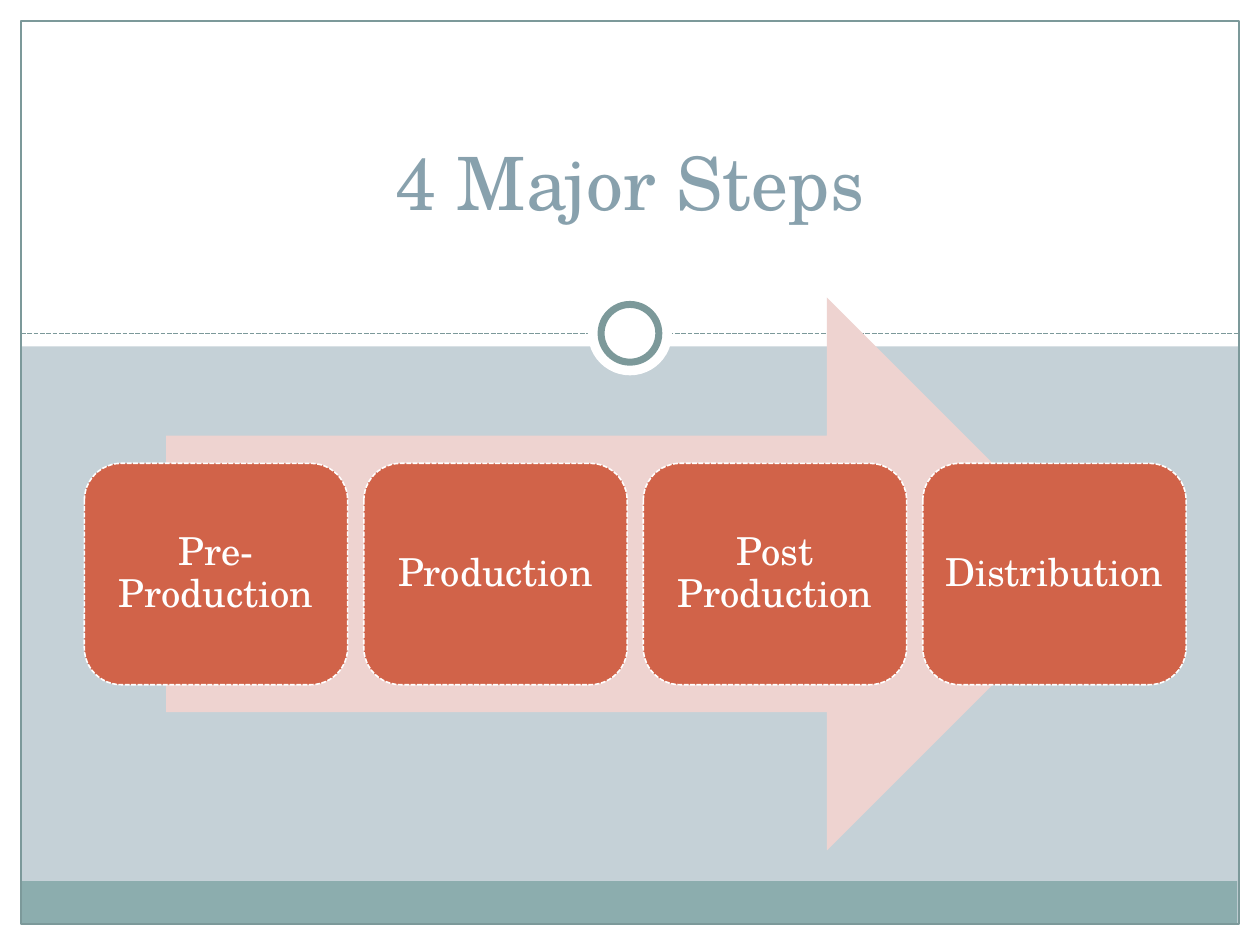
from dataclasses import dataclass
from typing import Optional

from pptx import Presentation
from pptx.dml.color import RGBColor
from pptx.enum.dml import MSO_LINE
from pptx.enum.shapes import MSO_CONNECTOR, MSO_SHAPE
from pptx.enum.text import MSO_ANCHOR, PP_ALIGN
from pptx.oxml.ns import qn
from pptx.util import Pt
from lxml.etree import SubElement


@dataclass(frozen=True)
class Theme:
    font: str = "TeX Gyre Schola"
    title_size: float = 42
    step_size: float = 22
    title: str = "88A1AD"
    backdrop: str = "C5D1D7"
    white: str = "FFFFFF"
    footer: str = "8CADAE"
    rule: str = "7C999A"
    arrow: str = "EED3D0"
    step: str = "D16349"


@dataclass(frozen=True)
class Stroke:
    color: str
    width: float
    dash: Optional[MSO_LINE] = None


@dataclass(frozen=True)
class Box:
    left: float
    top: float
    width: float
    height: float

    def points(self) -> tuple:
        return Pt(self.left), Pt(self.top), Pt(self.width), Pt(self.height)


@dataclass(frozen=True)
class Shape:
    kind: MSO_SHAPE
    box: Box
    fill: Optional[str] = None
    stroke: Optional[Stroke] = None


T = Theme()
W, H, MARGIN = 720, 540, 12
CENTER_X, RULE_Y = W / 2, 190.5
STEPS = ["Pre-Production", "Production", "Post Production", "Distribution"]
STEP_BOX, STEP_PITCH = Box(48.2, 264.75, 150.5, 126.5), 159.7
STEP_STROKE = Stroke(T.white, 0.9, MSO_LINE.SQUARE_DOT)


def centered(diameter: float) -> Box:
    """Box of a circle around the middle of the divider."""
    return Box(CENTER_X - diameter / 2, RULE_Y - diameter / 2, diameter, diameter)


MARGINS = [
    Box(0, H - MARGIN, W, MARGIN),
    Box(W - MARGIN, 0, MARGIN, H),
    Box(0, 0, MARGIN, H),
    Box(0, 0, W, 198),
]
BANDS = [Shape(MSO_SHAPE.RECTANGLE, box, T.white) for box in MARGINS] + [
    Shape(MSO_SHAPE.RECTANGLE, Box(11.5, 503.5, 695.5, 24.5), T.footer),
]
FRAME_AND_RING = [
    Shape(MSO_SHAPE.RECTANGLE, Box(MARGIN, MARGIN, W - 2 * MARGIN, H - 2 * MARGIN),
          stroke=Stroke(T.rule, 0.75)),
    Shape(MSO_SHAPE.OVAL, centered(48), T.white),
    Shape(MSO_SHAPE.OVAL, centered(33), T.white, Stroke(T.rule, 4)),
]
ARROW = Shape(MSO_SHAPE.RIGHT_ARROW, Box(95, 170, 535.5, 316), T.arrow)


def set_line(line, stroke: Stroke) -> None:
    line.color.rgb = RGBColor.from_string(stroke.color)
    line.width = Pt(stroke.width)
    if stroke.dash is not None:
        line.dash_style = stroke.dash


def draw_shape(s, shape: Shape):
    sp = s.shapes.add_shape(shape.kind, *shape.box.points())
    sp.shadow.inherit = False
    if shape.fill:
        sp.fill.solid()
        sp.fill.fore_color.rgb = RGBColor.from_string(shape.fill)
    else:
        sp.fill.background()
    if shape.stroke:
        set_line(sp.line, shape.stroke)
    else:
        sp.line.fill.background()
    return sp


def draw_divider(s) -> None:
    line = s.shapes.add_connector(MSO_CONNECTOR.STRAIGHT, Pt(MARGIN), Pt(RULE_Y),
                                  Pt(W - MARGIN), Pt(RULE_Y))
    set_line(line.line, Stroke(T.rule, 0.9, MSO_LINE.SQUARE_DOT))
    SubElement(line._element.spPr, qn("a:effectLst"))


def write(sp, text: str, size: float, color: str, frame_format: dict,
          spacing: float = 1.0) -> None:
    tf = sp.text_frame
    for name, value in {"word_wrap": True, **frame_format}.items():
        setattr(tf, name, value)
    p = tf.paragraphs[0]
    for name, value in {"alignment": PP_ALIGN.CENTER, "line_spacing": spacing}.items():
        setattr(p, name, value)
    r = p.add_run()
    r.text = text
    for name, value in {"name": T.font, "size": Pt(size)}.items():
        setattr(r.font, name, value)
    r.font.color.rgb = RGBColor.from_string(color)


def draw_steps(s) -> None:
    sides = ("left", "top", "right", "bottom")
    frame_format = {"vertical_anchor": MSO_ANCHOR.MIDDLE,
                    **{f"margin_{side}": Pt(6.6) for side in sides}}
    for i, name in enumerate(STEPS):
        box = Box(STEP_BOX.left + i * STEP_PITCH, STEP_BOX.top,
                  STEP_BOX.width, STEP_BOX.height)
        sp = draw_shape(s, Shape(MSO_SHAPE.ROUNDED_RECTANGLE, box, T.step, STEP_STROKE))
        write(sp, name, T.step_size, T.white, frame_format, spacing=0.9)


def main() -> None:
    prs = Presentation()
    prs.slide_width, prs.slide_height = Pt(W), Pt(H)
    s = prs.slides.add_slide(prs.slide_layouts[6])
    s.background.fill.solid()
    s.background.fill.fore_color.rgb = RGBColor.from_string(T.backdrop)

    for band in BANDS:
        draw_shape(s, band)
    draw_divider(s)
    for shape in FRAME_AND_RING:
        draw_shape(s, shape)

    title = s.shapes.add_textbox(*Box(54, 30, 612, 102).points())
    write(title, "4 Major Steps", T.title_size, T.title,
          {"vertical_anchor": MSO_ANCHOR.BOTTOM})

    draw_shape(s, ARROW)
    draw_steps(s)
    prs.save("out.pptx")


if __name__ == "__main__":
    main()
